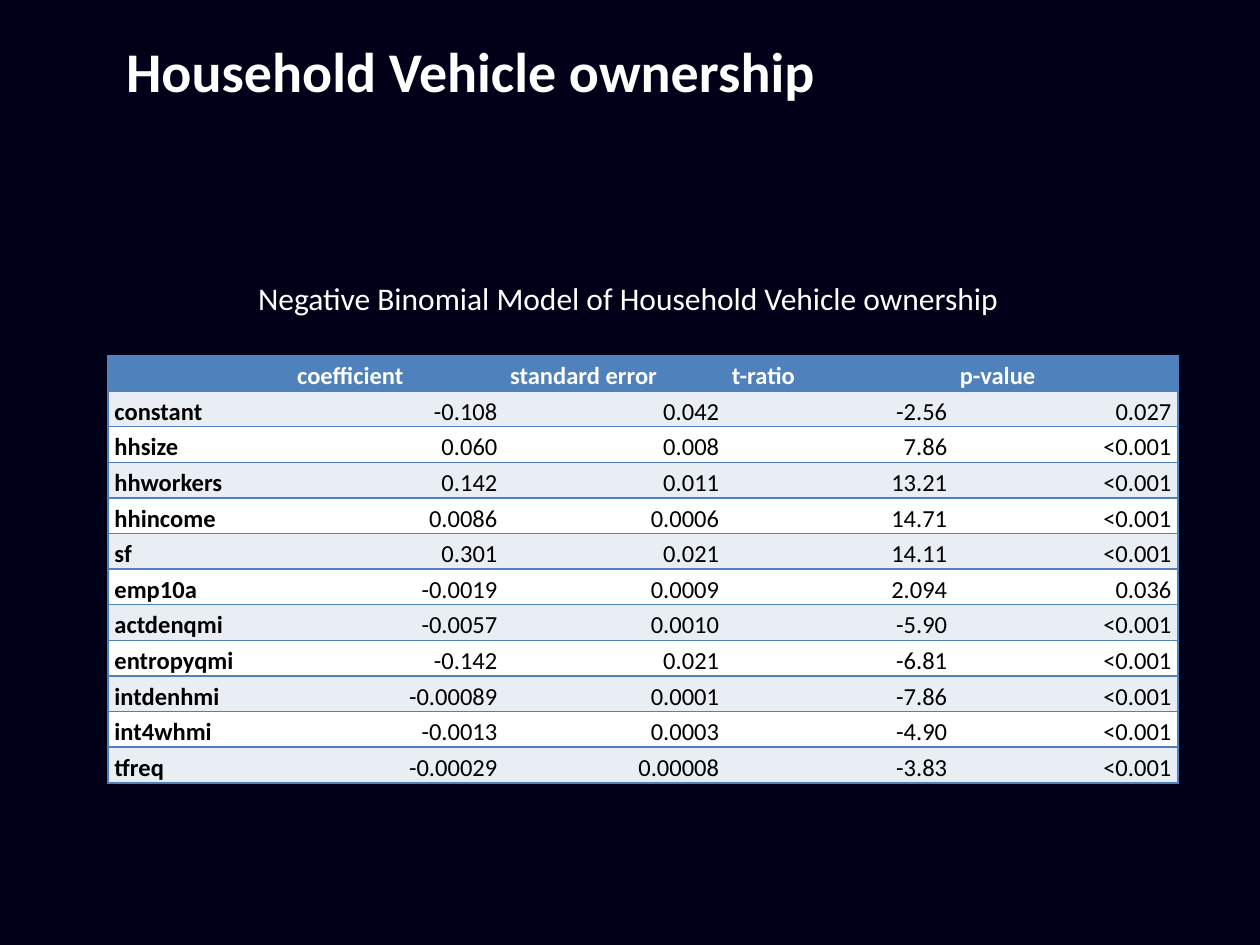
from dataclasses import dataclass

from lxml.etree import SubElement
from pptx import Presentation
from pptx.dml.color import RGBColor
from pptx.enum.text import MSO_ANCHOR, MSO_AUTO_SIZE, PP_ALIGN
from pptx.oxml import parse_xml
from pptx.oxml.ns import nsdecls, qn
from pptx.util import Pt


@dataclass(frozen=True)
class Theme:
    font: str = "Calibri"
    background: str = "000018"
    light: str = "FFFFFF"
    dark: str = "000000"
    accent: str = "4F81BD"
    band: str = "E9EDF4"
    title_size: int = 32
    caption_size: int = 18
    table_size: int = 14


THEME = Theme()
NO_GRID_STYLE = "{2D5ABB26-0587-4C30-8999-92F81FD0307C}"
COLUMN_WIDTHS = (104.4, 121.68, 126.72, 130.32, 128.16)
ROW_HEIGHT = 20.37

HEADER = ("", "coefficient", "standard error", "t-ratio", "p-value")
ESTIMATES = (
    ("constant", "-0.108", "0.042", "-2.56", "0.027"),
    ("hhsize", "0.060", "0.008", "7.86", "<0.001"),
    ("hhworkers", "0.142", "0.011", "13.21", "<0.001"),
    ("hhincome", "0.0086", "0.0006", "14.71", "<0.001"),
    ("sf", "0.301", "0.021", "14.11", "<0.001"),
    ("emp10a", "-0.0019", "0.0009", "2.094", "0.036"),
    ("actdenqmi", "-0.0057", "0.0010", "-5.90", "<0.001"),
    ("entropyqmi", "-0.142", "0.021", "-6.81", "<0.001"),
    ("intdenhmi", "-0.00089", "0.0001", "-7.86", "<0.001"),
    ("int4whmi", "-0.0013", "0.0003", "-4.90", "<0.001"),
    ("tfreq", "-0.00029", "0.00008", "-3.83", "<0.001"),
)


def style_runs(paragraph, size, color, bold=False):
    for run in paragraph.runs:
        run.font.name = THEME.font
        run.font.size = Pt(size)
        run.font.bold = bold
        run.font.color.rgb = RGBColor.from_string(color)


def add_label(slide, text, box, size, bold=False, wrap=True):
    frame = slide.shapes.add_textbox(*map(Pt, box)).text_frame
    frame.word_wrap = wrap
    frame.auto_size = MSO_AUTO_SIZE.SHAPE_TO_FIT_TEXT
    frame.text = text
    style_runs(frame.paragraphs[0], size, THEME.light, bold)


def set_borders(cell, sides):
    """Draw 1 pt lines on the given sides, listed in the order L, R, T, B."""
    properties = cell._tc.get_or_add_tcPr()
    for index, side in enumerate(sides):
        properties.insert(index, parse_xml(
            f'<a:ln{side} {nsdecls("a")} w="{Pt(1)}"><a:solidFill>'
            f'<a:srgbClr val="{THEME.accent}"/></a:solidFill></a:ln{side}>'))


def fill_cell(cell, text, fill, color, bold, align):
    cell.fill.solid()
    cell.fill.fore_color.rgb = RGBColor.from_string(fill)
    cell.vertical_anchor = MSO_ANCHOR.BOTTOM
    cell.margin_left = cell.margin_right = Pt(3.6)
    cell.margin_top, cell.margin_bottom = Pt(0.7), Pt(0)
    cell.text_frame.text = text
    paragraph = cell.text_frame.paragraphs[0]
    paragraph.alignment = align
    paragraph.line_spacing = 1.15
    style_runs(paragraph, THEME.table_size, color, bold)
    if not text:
        # An empty cell still needs the small type size to keep its row low.
        SubElement(paragraph._p, qn("a:endParaRPr"), sz=str(THEME.table_size * 100))


def add_estimates_table(slide, left, top):
    rows = (HEADER, *ESTIMATES)
    frame = slide.shapes.add_table(
        len(rows), len(HEADER), Pt(left), Pt(top),
        Pt(sum(COLUMN_WIDTHS)), Pt(ROW_HEIGHT * len(rows)))
    table = frame.table
    table.first_row = table.horz_banding = False
    table._tbl.tblPr.find(qn("a:tableStyleId")).text = NO_GRID_STYLE
    for column, width in zip(table.columns, COLUMN_WIDTHS):
        column.width = Pt(width)

    last = len(HEADER) - 1
    for r, values in enumerate(rows):
        table.rows[r].height = Pt(ROW_HEIGHT)
        is_header = r == 0
        fill = THEME.accent if is_header else THEME.band if r % 2 else THEME.light
        color = THEME.light if is_header else THEME.dark
        for c, value in enumerate(values):
            is_heading = is_header or c == 0
            align = PP_ALIGN.LEFT if is_heading else PP_ALIGN.RIGHT
            cell = table.cell(r, c)
            fill_cell(cell, value, fill, color, is_heading, align)
            set_borders(cell, {0: "LTB", last: "RTB"}.get(c, "TB"))


def main():
    presentation = Presentation()
    presentation.slide_width, presentation.slide_height = Pt(720), Pt(540)
    slide = presentation.slides.add_slide(presentation.slide_layouts[6])
    slide.background.fill.solid()
    slide.background.fill.fore_color.rgb = RGBColor.from_string(THEME.background)

    add_estimates_table(slide, 61.8, 203.1)
    add_label(slide, "Negative Binomial Model of Household Vehicle ownership",
              (140.4, 155.8, 461.5, 29.1), THEME.caption_size)
    add_label(slide, "Household Vehicle ownership",
              (65, 17.3, 411.8, 46.1), THEME.title_size, bold=True, wrap=False)
    presentation.save("out.pptx")


if __name__ == "__main__":
    main()
